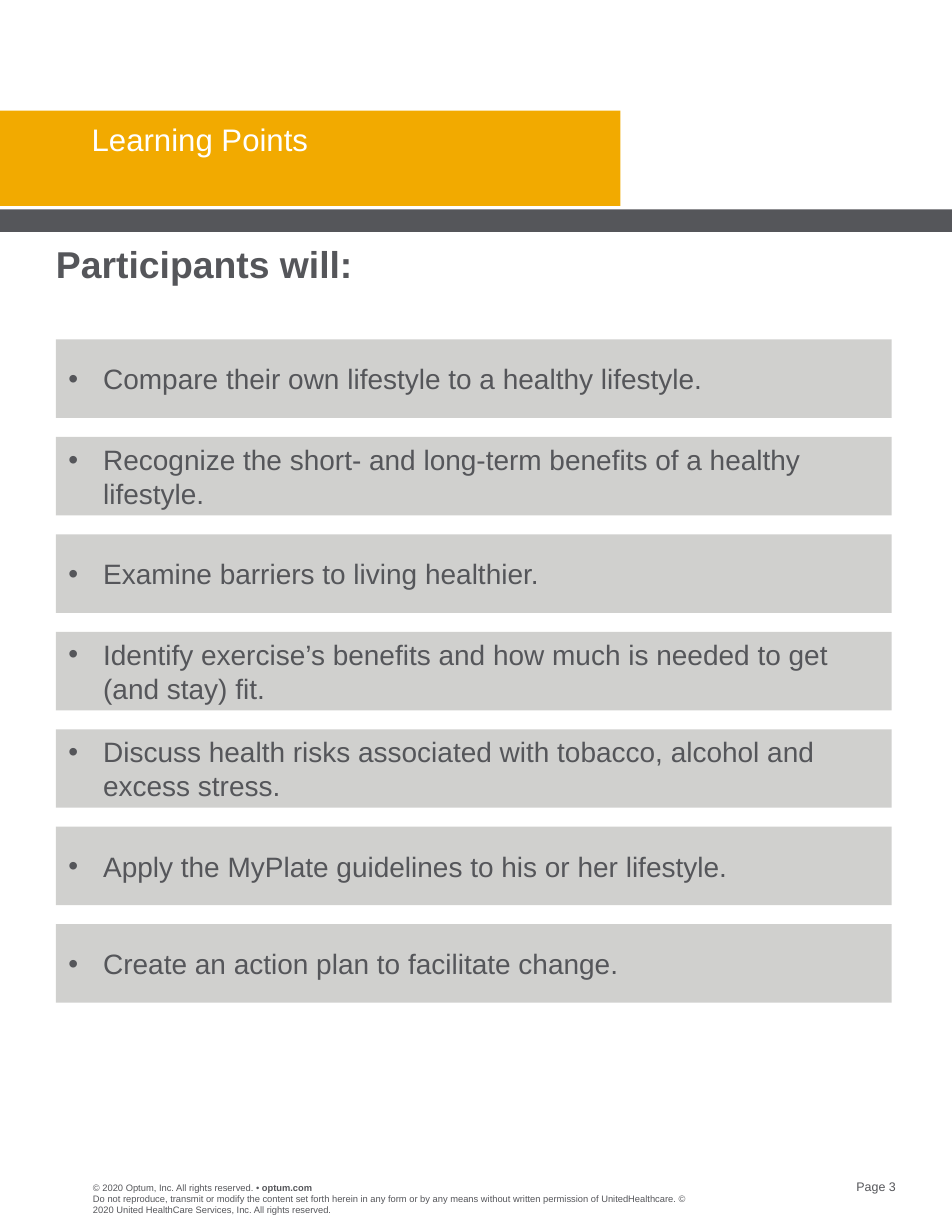
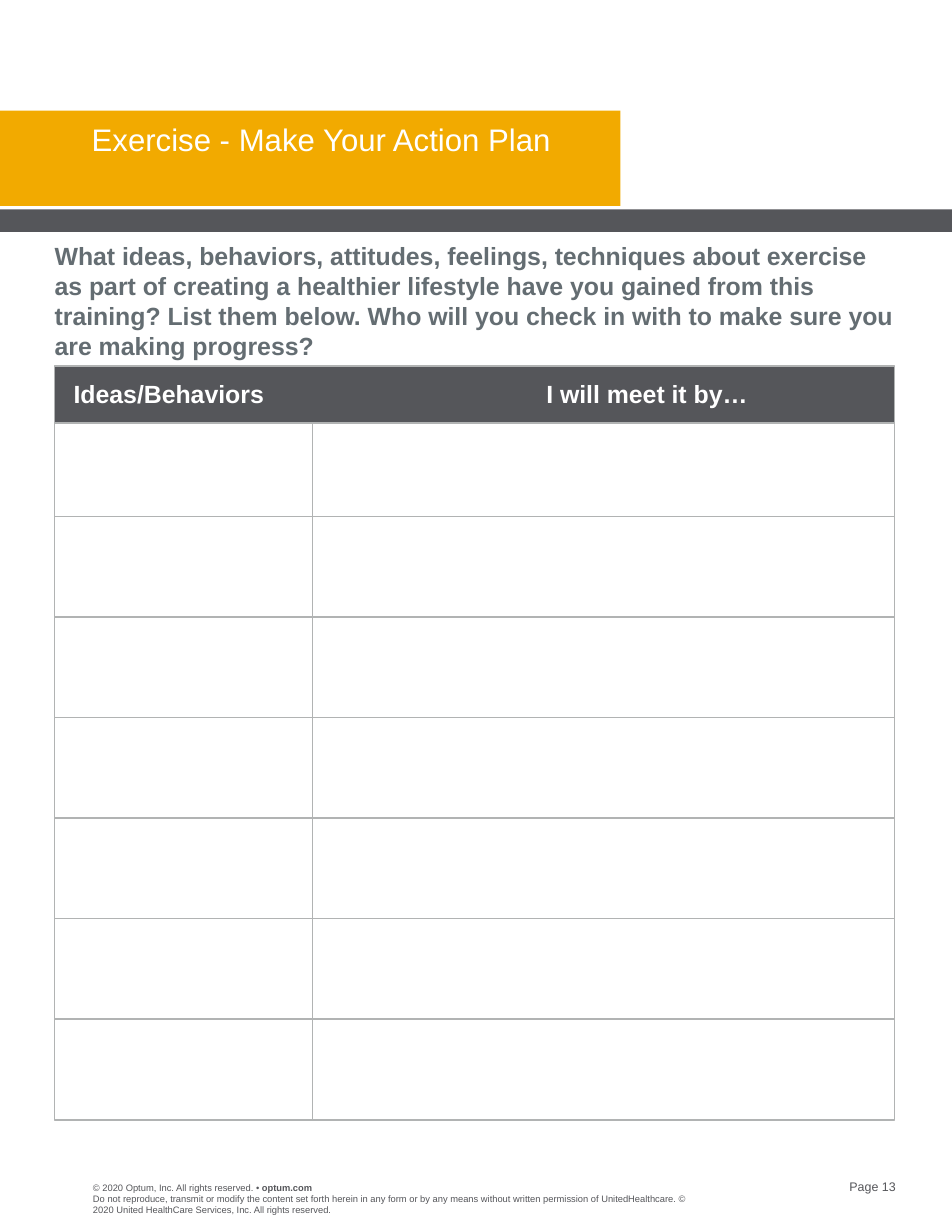
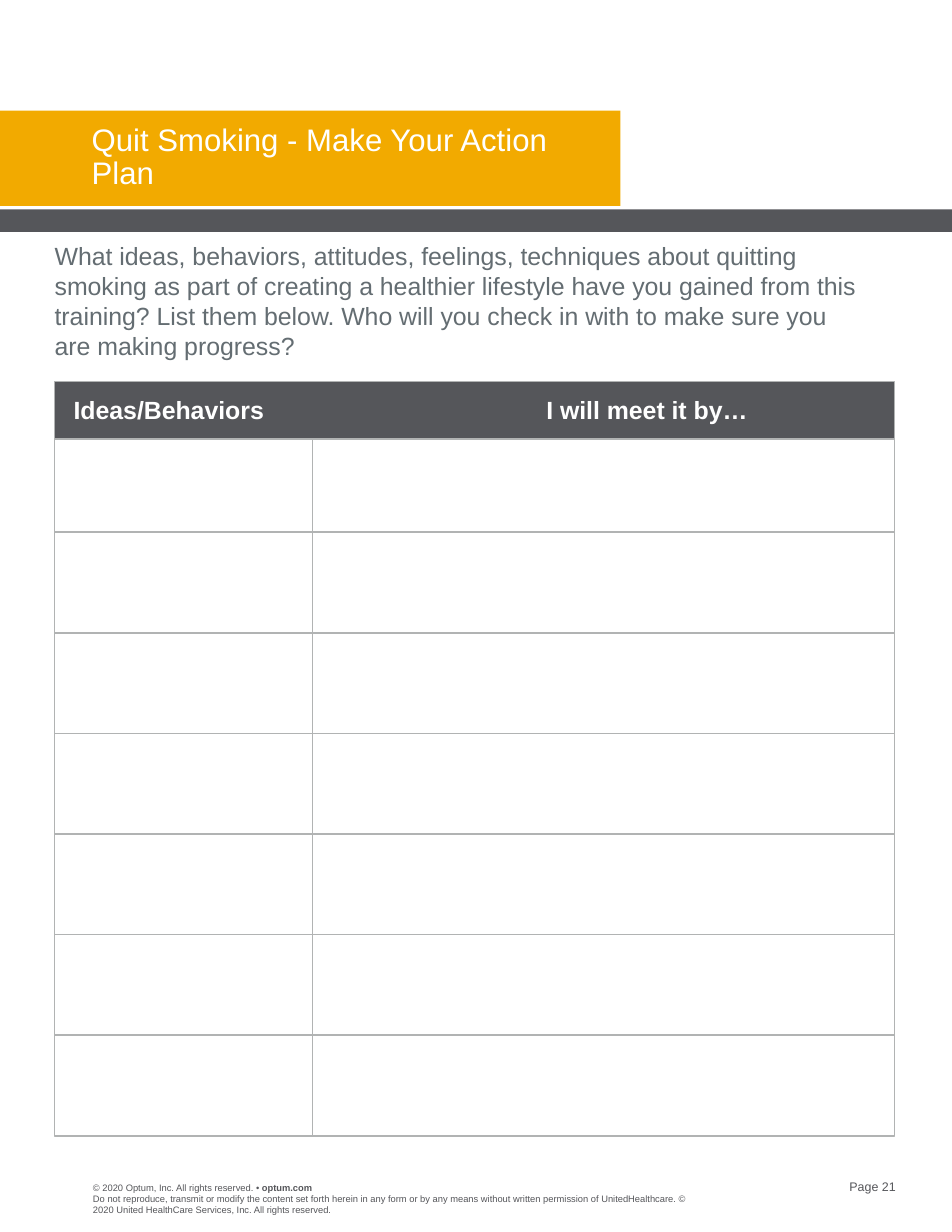
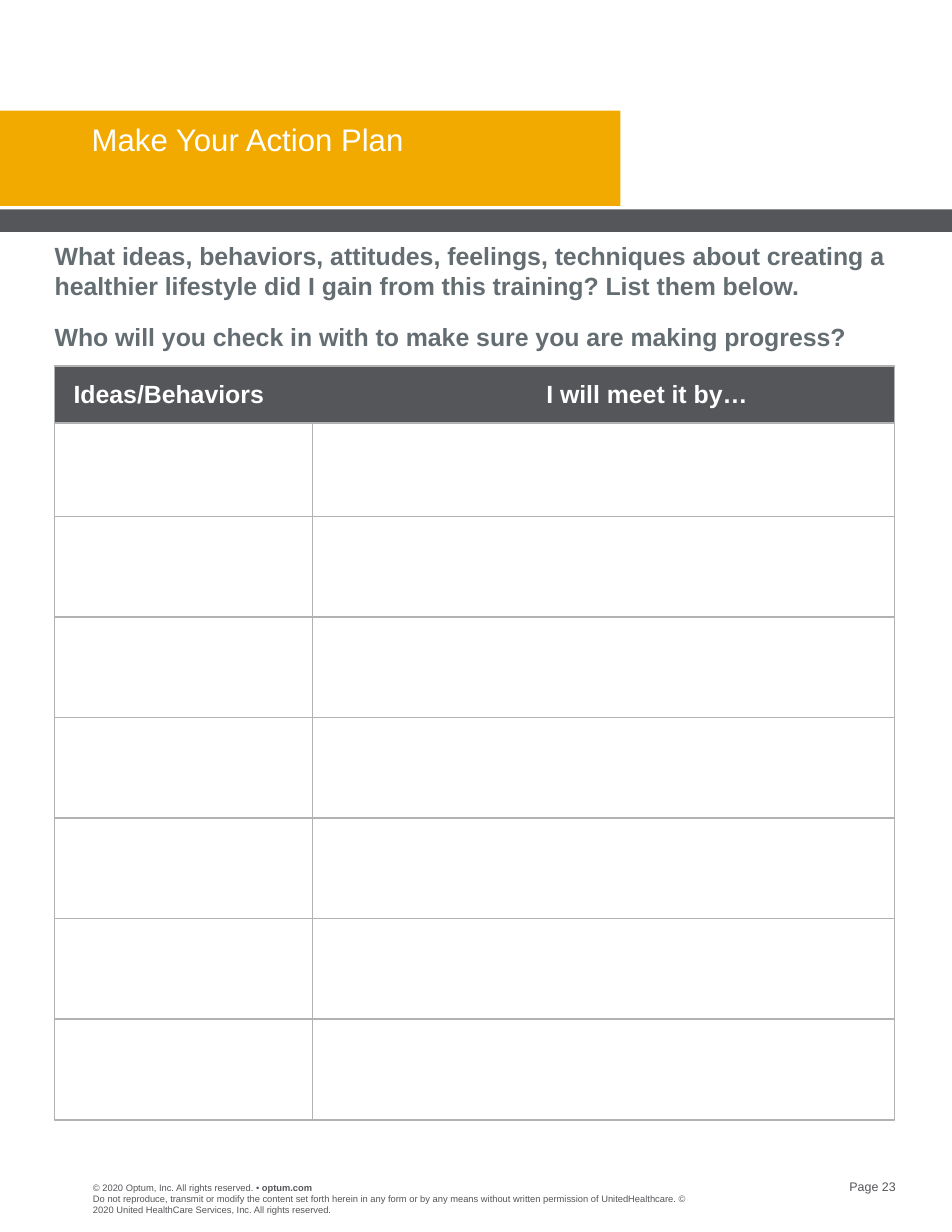
from lxml import etree
from pptx import Presentation
from pptx.dml.color import RGBColor
from pptx.enum.shapes import MSO_CONNECTOR, MSO_SHAPE
from pptx.enum.text import MSO_ANCHOR, PP_ALIGN
from pptx.oxml.ns import qn
from pptx.util import Cm, Pt

RECTANGLE = MSO_SHAPE.RECTANGLE
STRAIGHT = MSO_CONNECTOR.STRAIGHT
TOP, MIDDLE = MSO_ANCHOR.TOP, MSO_ANCHOR.MIDDLE
LEFT, RIGHT = PP_ALIGN.LEFT, PP_ALIGN.RIGHT

FONT = "Arial"
COLORS = {
    "amber": "F2AA00",
    "charcoal": "55565A",
    "slate": "646D72",
    "panel": "D0D0CE",
    "rule": "B1B3B3",
    "white": "FFFFFF",
}
PAGE_WIDTH, PAGE_HEIGHT = 21.59, 27.94

COPYRIGHT = "© 2020 Optum, Inc. All rights reserved. • "
WEBSITE = "optum.com"
LEGAL = (
    "Do not reproduce, transmit or modify the content set forth herein in any form "
    "or by any means without written permission of UnitedHealthcare. "
    "© 2020 United HealthCare Services, Inc. All rights reserved."
)

LEARNING_POINTS = [
    "Compare their own lifestyle to a healthy lifestyle.",
    "Recognize the short- and long-term benefits of a healthy lifestyle.",
    "Examine barriers to living healthier.",
    "Identify exercise’s benefits and how much is needed to get (and stay) fit.",
    "Discuss health risks associated with tobacco, alcohol and excess stress.",
    "Apply the MyPlate guidelines to his or her lifestyle.",
    "Create an action plan to facilitate change.",
]
POINTS_TOP, POINT_HEIGHT, POINT_STEP = 7.7, 1.78, 2.21

PLAN_LEFT, PLAN_WIDTH = 1.24, 19.05
PLAN_HEADER_HEIGHT, PLAN_BODY_HEIGHT = 1.3, 15.8
FIRST_ROW_HEIGHT, ROW_HEIGHT, ROW_RULES = 2.11, 2.28, 6
IDEAS_WIDTH = 5.85
MEET_BY_TAB = 10.72

CHECK_IN = "Who will you check in with to make sure you are making progress?"
PLANS = [
    {
        "title": "Exercise - Make Your Action Plan",
        "page": 13,
        "prompts": [
            "What ideas, behaviors, attitudes, feelings, techniques about exercise as part "
            "of creating a healthier lifestyle have you gained from this training? "
            f"List them below. {CHECK_IN}"
        ],
    },
    {
        "title": "Quit Smoking - Make Your Action Plan",
        "page": 21,
        "prompts": [
            "What ideas, behaviors, attitudes, feelings, techniques about quitting smoking "
            "as part of creating a healthier lifestyle have you gained from this training? "
            f"List them below. {CHECK_IN}"
        ],
        "prompt_width": 18.49,
        "bold": False,
        "top": 8.66,
    },
    {
        "title": "Make Your Action Plan",
        "page": 23,
        "prompts": [
            "What ideas, behaviors, attitudes, feelings, techniques about creating a "
            "healthier lifestyle did I gain from this training? List them below.",
            CHECK_IN,
        ],
    },
]


def rgb(color):
    return RGBColor.from_string(COLORS[color])


def add_run(paragraph, text, size, color, bold=False):
    run = paragraph.add_run()
    run.text = text
    run.font.name = FONT
    run.font.size = Pt(size)
    run.font.bold = bold
    run.font.color.rgb = rgb(color)


def set_frame(frame, anchor=TOP, inset_x=0, inset_y=0):
    frame.word_wrap = True
    frame.vertical_anchor = anchor
    frame.margin_left = frame.margin_right = Cm(inset_x)
    frame.margin_top = frame.margin_bottom = Cm(inset_y)


def add_text(slide, box, paragraphs, size, color, bold=False, align=LEFT, space_after=0):
    """Add a text box without insets and return its paragraphs."""
    frame = slide.shapes.add_textbox(*map(Cm, box)).text_frame
    set_frame(frame)
    for index, text in enumerate(paragraphs):
        paragraph = frame.add_paragraph() if index else frame.paragraphs[0]
        paragraph.alignment = align
        paragraph.space_after = Pt(space_after)
        add_run(paragraph, text, size, color, bold)
    return frame.paragraphs


def add_rectangle(slide, box, fill=None, line=None, line_width=1):
    rectangle = slide.shapes.add_shape(RECTANGLE, *map(Cm, box))
    rectangle.shadow.inherit = False
    if fill:
        rectangle.fill.solid()
        rectangle.fill.fore_color.rgb = rgb(fill)
    else:
        rectangle.fill.background()
    if line:
        rectangle.line.color.rgb = rgb(line)
        rectangle.line.width = Pt(line_width)
    else:
        rectangle.line.fill.background()
    return rectangle


def add_rule(slide, x1, y1, x2, y2):
    rule = slide.shapes.add_connector(STRAIGHT, Cm(x1), Cm(y1), Cm(x2), Cm(y2))
    rule.line.color.rgb = rgb("rule")
    rule.line.width = Pt(1)
    etree.SubElement(rule._element.spPr, qn("a:effectLst"))


def set_bullet(paragraph, indent, color):
    properties = paragraph._p.get_or_add_pPr()
    properties.set("marL", str(Cm(indent)))
    properties.set("indent", str(-Cm(indent)))
    bullet_color = etree.SubElement(properties, qn("a:buClr"))
    etree.SubElement(bullet_color, qn("a:srgbClr"), val=COLORS[color])
    etree.SubElement(properties, qn("a:buFont"), typeface=FONT)
    etree.SubElement(properties, qn("a:buChar"), char="•")


def set_tab(paragraph, position):
    tabs = etree.SubElement(paragraph._p.get_or_add_pPr(), qn("a:tabLst"))
    etree.SubElement(tabs, qn("a:tab"), pos=str(Cm(position)), algn="l")


def add_page(presentation, title, number):
    """Add a slide with the title band, the divider bar and the footer."""
    slide = presentation.slides.add_slide(presentation.slide_layouts[6])
    add_rectangle(slide, (0, 2.51, 14.07, 2.16), "amber")
    add_rectangle(slide, (0, 4.75, PAGE_WIDTH, 0.51), "charcoal")
    heading = add_text(slide, (2.08, 2.82, 11.43, 1.55), [title], 20, "white")[0]
    heading.line_spacing = 0.9
    notice = add_text(slide, (2.11, 26.8, 5.08, 0.25), [COPYRIGHT], 6, "charcoal")[0]
    add_run(notice, WEBSITE, 6, "charcoal", bold=True)
    add_text(slide, (2.11, 27.05, 13.46, 0.51), [LEGAL], 6, "charcoal")
    add_text(slide, (18.26, 26.75, 2.06, 0.33), [f"Page {number}"], 8, "charcoal", align=RIGHT)
    return slide


def add_learning_point(slide, top, text):
    panel = add_rectangle(slide, (1.27, top, 18.95, POINT_HEIGHT), "panel")
    set_frame(panel.text_frame, MIDDLE, 0.28, 0.25)
    point = panel.text_frame.paragraphs[0]
    set_bullet(point, 0.79, "charcoal")
    point.alignment = LEFT
    add_run(point, text, 18, "charcoal")


def add_plan_grid(slide, top):
    """Draw the worksheet: a header band over two ruled columns to write in."""
    header = add_rectangle(
        slide, (PLAN_LEFT, top, PLAN_WIDTH, PLAN_HEADER_HEIGHT), "charcoal", "rule", 0.75
    )
    set_frame(header.text_frame, TOP, 0.43, 0.28)
    labels = header.text_frame.paragraphs[0]
    set_tab(labels, MEET_BY_TAB)
    labels.alignment = LEFT
    add_run(labels, "Ideas/Behaviors\tI will meet it by…", 16, "white", bold=True)

    body_top = top + PLAN_HEADER_HEIGHT
    add_rectangle(slide, (PLAN_LEFT, body_top, PLAN_WIDTH, PLAN_BODY_HEIGHT), line="rule")
    for row in range(ROW_RULES):
        y = body_top + FIRST_ROW_HEIGHT + row * ROW_HEIGHT
        add_rule(slide, PLAN_LEFT, y, PLAN_LEFT + PLAN_WIDTH, y)
    column_x = PLAN_LEFT + IDEAS_WIDTH
    add_rule(slide, column_x, body_top, column_x, body_top + PLAN_BODY_HEIGHT)


def add_learning_points_page(presentation):
    slide = add_page(presentation, "Learning Points", 3)
    add_text(slide, (1.27, 5.46, 19.02, 1.02), ["Participants will:"], 24, "charcoal", bold=True)
    for index, text in enumerate(LEARNING_POINTS):
        add_learning_point(slide, POINTS_TOP + index * POINT_STEP, text)


def add_plan_page(presentation, title, page, prompts, prompt_width=PLAN_WIDTH, bold=True, top=8.3):
    slide = add_page(presentation, title, page)
    add_plan_grid(slide, top)
    add_text(
        slide, (PLAN_LEFT, 5.46, prompt_width, 2.82), prompts, 16, "slate", bold, space_after=13.4
    )


def main():
    presentation = Presentation()
    presentation.slide_width = Cm(PAGE_WIDTH)
    presentation.slide_height = Cm(PAGE_HEIGHT)
    add_learning_points_page(presentation)
    for plan in PLANS:
        add_plan_page(presentation, **plan)
    presentation.save("out.pptx")


if __name__ == "__main__":
    main()
